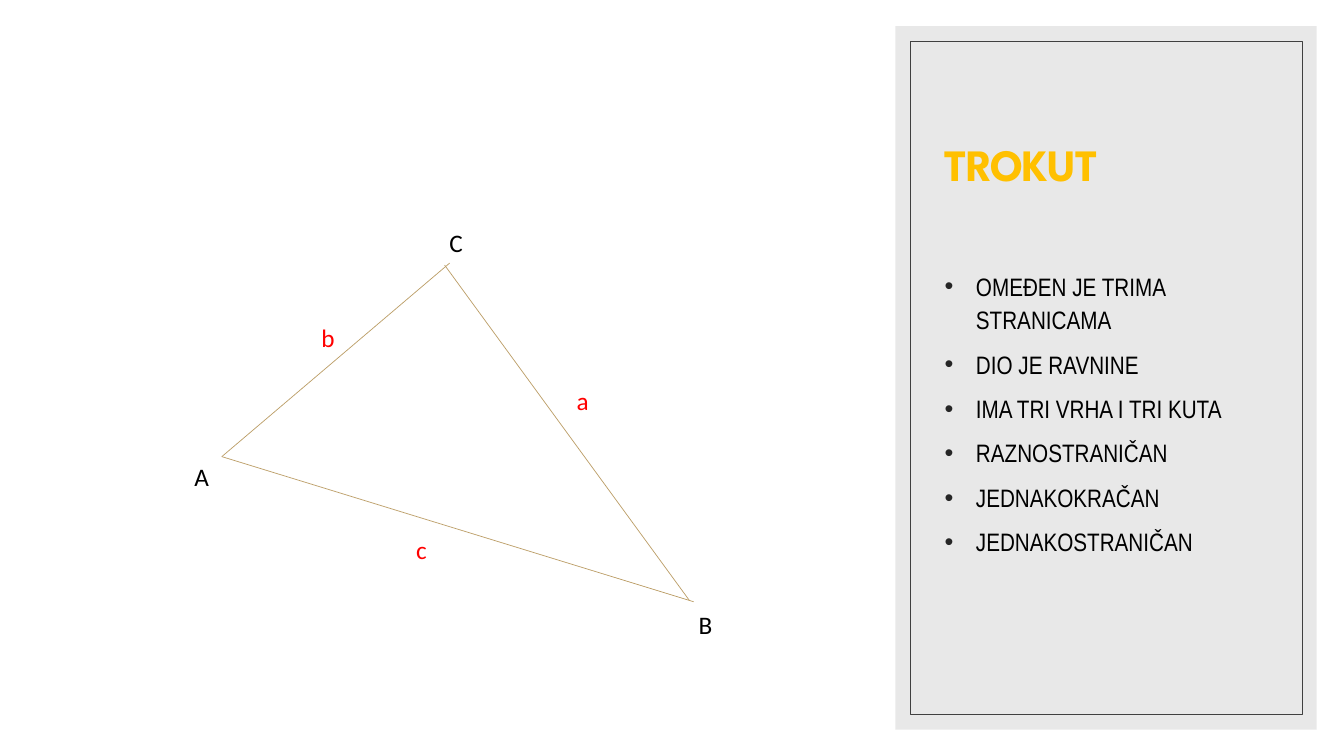
from typing import NamedTuple

from pptx import Presentation
from pptx.dml.color import RGBColor
from pptx.enum.shapes import MSO_CONNECTOR, MSO_SHAPE
from pptx.enum.text import MSO_ANCHOR, MSO_AUTO_SIZE, PP_ALIGN
from pptx.oxml.ns import qn
from pptx.shapes.autoshape import Shape
from pptx.slide import Slide
from pptx.text.text import _Paragraph as Paragraph
from pptx.util import Emu, Pt
from lxml.etree import SubElement

EMU_PER_PX = 9144  # 100 px to the inch

BLACK, RED, GOLD = "000000", "FF0000", "FFC000"
SIDE_COLOUR, FRAME_COLOUR, PANEL_COLOUR, BULLET_COLOUR = "BC9E67", "404040", "D9D9D9", "262626"
BULLET_INDENT = 31


class Box(NamedTuple):
    left: int
    top: int
    width: int
    height: int


class Label(NamedTuple):
    text: str
    box: Box
    colour: str
    wraps: bool = True


class Side(NamedTuple):
    start: tuple[int, int]
    end: tuple[int, int]


PANEL = Box(888, 26, 418, 698)
FRAME = Box(903, 41, 389, 668)
TITLE = Box(927, 66, 344, 180)
BODY = Box(927, 261, 344, 384)

FACTS = [
    "OMEĐEN JE TRIMA STRANICAMA",
    "DIO JE RAVNINE",
    "IMA TRI VRHA I TRI KUTA",
    "RAZNOSTRANIČAN",
    "JEDNAKOKRAČAN",
    "JEDNAKOSTRANIČAN",
]
SIDES = [
    Side((220, 453), (446, 261)),
    Side((441, 263), (684, 596)),
    Side((688, 597), (220, 453)),
]
LABELS = [
    Label("A", Box(183, 453, 196, 40), BLACK),
    Label("B", Box(683, 600, 230, 40), BLACK),
    Label("C", Box(436, 221, 246, 40), BLACK),
    Label("a", Box(562, 377, 179, 40), RED),
    Label("b", Box(309, 315, 33, 40), RED, wraps=False),
    Label("c", Box(403, 525, 159, 40), RED),
]


def px(length: int) -> Emu:
    return Emu(length * EMU_PER_PX)


def rgb(colour: str) -> RGBColor:
    return RGBColor.from_string(colour)


def place(shape: Shape, box: Box) -> None:
    shape.left, shape.top, shape.width, shape.height = map(px, box)


def add_span(para: Paragraph, text: str, font: str, size: int, colour: str):
    span = para.add_run()
    span.text = text
    span.font.name = font
    span.font.size = Pt(size)
    span.font.color.rgb = rgb(colour)
    return span


def add_rectangle(page: Slide, box: Box) -> Shape:
    """Add a rectangle behind the title, without shadow."""
    rectangle = page.shapes.add_shape(MSO_SHAPE.RECTANGLE, *map(px, box))
    rectangle.shadow.inherit = False
    page.shapes.title.element.addprevious(rectangle.element)
    return rectangle


def add_panel(page: Slide) -> None:
    panel = add_rectangle(page, PANEL)
    panel.fill.solid()
    panel.fill.fore_color.rgb = rgb(PANEL_COLOUR)
    panel.line.fill.background()
    colour = panel.element.spPr.find(f"{qn('a:solidFill')}/{qn('a:srgbClr')}")
    SubElement(colour, qn("a:alpha"), val="60000")

    frame = add_rectangle(page, FRAME)
    frame.fill.background()
    frame.line.color.rgb = rgb(FRAME_COLOUR)
    frame.line.width = Pt(0.5)


def fill_title(title: Shape) -> None:
    place(title, TITLE)
    frame = title.text_frame
    frame.auto_size = MSO_AUTO_SIZE.NONE
    frame.vertical_anchor = MSO_ANCHOR.BOTTOM
    frame.margin_bottom = px(57)
    para = frame.paragraphs[0]
    para.alignment = PP_ALIGN.LEFT
    span = add_span(para, "TROKUT", "League Spartan", 32, GOLD)
    span.font.bold = True
    span.font._element.set("spc", "-70")


def add_bullet(para: Paragraph) -> None:
    properties = para._p.get_or_add_pPr()
    properties.set("marL", str(px(BULLET_INDENT)))
    properties.set("indent", str(-px(BULLET_INDENT)))
    colour = SubElement(properties, qn("a:buClr"))
    SubElement(colour, qn("a:srgbClr"), val=BULLET_COLOUR)
    SubElement(properties, qn("a:buFont"), typeface="Arial")
    SubElement(properties, qn("a:buChar"), char="•")


def fill_body(body: Shape) -> None:
    place(body, BODY)
    frame = body.text_frame
    frame.auto_size = MSO_AUTO_SIZE.NONE
    for index, fact in enumerate(FACTS):
        para = frame.add_paragraph() if index else frame.paragraphs[0]
        para.line_spacing = 1.1
        para.space_before = Pt(8)
        add_bullet(para)
        add_span(para, fact, "Arial Narrow", 18, BLACK)


def add_side(page: Slide, side: Side) -> None:
    line = page.shapes.add_connector(
        MSO_CONNECTOR.STRAIGHT, *map(px, side.start), *map(px, side.end)
    )
    line.line.color.rgb = rgb(SIDE_COLOUR)
    line.line.width = Pt(0.5)
    SubElement(line.element.spPr, qn("a:effectLst"))


def add_label(page: Slide, label: Label) -> None:
    box = page.shapes.add_textbox(*map(px, label.box))
    frame = box.text_frame
    frame.word_wrap = label.wraps
    frame.auto_size = MSO_AUTO_SIZE.SHAPE_TO_FIT_TEXT
    add_span(frame.paragraphs[0], label.text, "Calibri", 18, label.colour)


def main() -> None:
    deck = Presentation()
    deck.slide_width, deck.slide_height = px(1333), px(750)
    page = deck.slides.add_slide(deck.slide_layouts.get_by_name("Title and Content"))
    add_panel(page)
    fill_title(page.shapes.title)
    fill_body(page.placeholders[1])
    for side in SIDES:
        add_side(page, side)
    for label in LABELS:
        add_label(page, label)
    deck.save("out.pptx")


if __name__ == "__main__":
    main()
